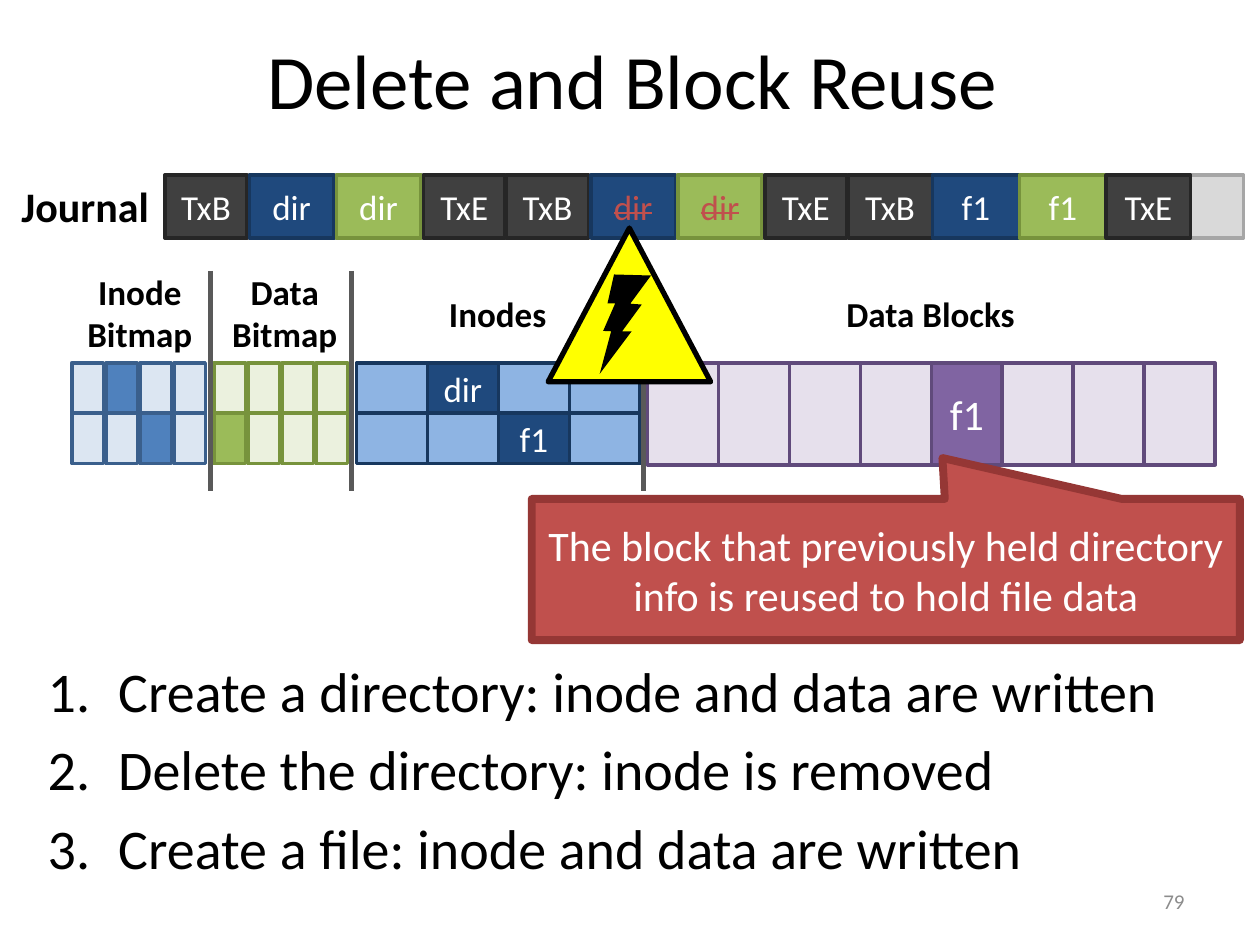
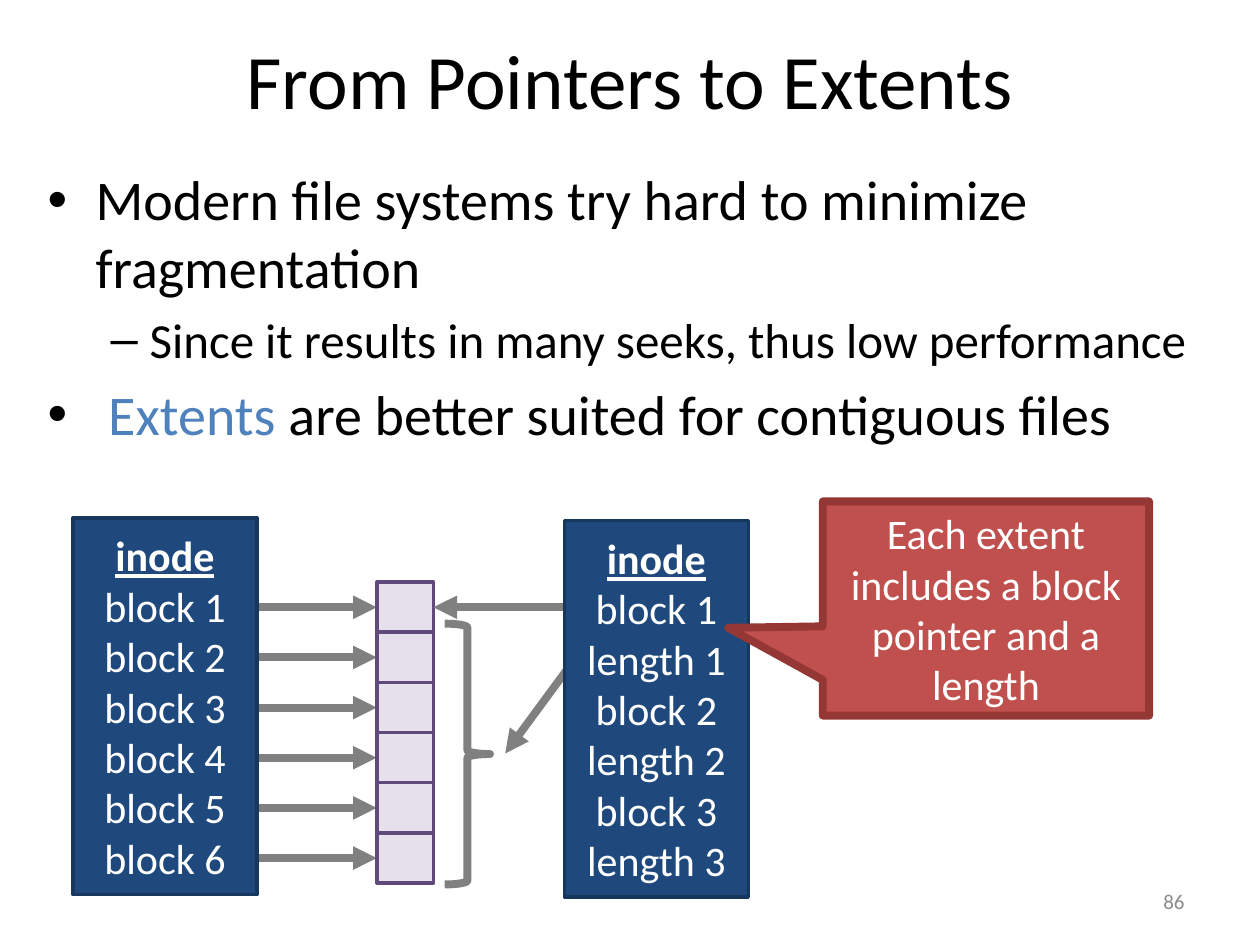
from pptx import Presentation
from pptx import util as u
from pptx.dml.color import RGBColor
from pptx.enum import shapes, text
from pptx.oxml.ns import qn
from lxml import etree

# Every length below is counted in columns and rows of this grid
COLS, ROWS = 100, 75
FONT = "Calibri"
COLOURS = dict(
    black="000000", white="FFFFFF", number="8C8C8C", accent="4F81BD", yellow="FFFF00",
    tag="404040", tag_line="262626", free="D9D9D9", free_line="A6A6A6",
    navy="1F497D", navy_line="17375E", sky="8EB4E3",
    green="9BBB59", green_line="77933C", pale_green="EBF1DE",
    blue_line="3A5F8C", pale_blue="DCE6F2",
    purple="8064A2", purple_line="604A7B", pale_purple="E6E0EC",
    red="C0504D", red_line="953735", divider="595959", arrow="808080",
)
KIND = shapes.MSO_SHAPE
LEFT, CENTRE, RIGHT = text.PP_ALIGN.LEFT, text.PP_ALIGN.CENTER, text.PP_ALIGN.RIGHT
TOP, MIDDLE = text.MSO_ANCHOR.TOP, text.MSO_ANCHOR.MIDDLE

# Body list levels: size, left margin and hanging indent, bullet tag and its attributes
NUMBERED = dict(size=32, margin=5.6, hang=5.6, bullet=("a:buAutoNum", {"type": "arabicPeriod"}))
BULLET = dict(size=32, margin=3.8, hang=3.8, bullet=("a:buChar", {"char": "•"}))
DASH = dict(size=28, margin=8.1, hang=3.1, level=1, bullet=("a:buChar", {"char": "–"}))


def rgb(name):
    return RGBColor.from_string(COLOURS[name])


def assign(target, values):
    for name, value in values.items():
        setattr(target, name, value)


class Deck:
    def __init__(self):
        self.prs = Presentation()
        assign(self.prs, dict(slide_width=u.Inches(10), slide_height=u.Inches(7.5)))
        self.s = None

    def x(self, columns):
        return u.Emu(int(self.prs.slide_width * columns / COLS))

    def y(self, rows):
        return u.Emu(int(self.prs.slide_height * rows / ROWS))

    def box(self, left, top, width, height):
        return self.x(left), self.y(top), self.x(width), self.y(height)

    def slide(self, title, number, left=5):
        """New slide with its title and slide number."""
        self.s = self.prs.slides.add_slide(self.prs.slide_layouts[5])
        sp = self.s.shapes.title
        assign(sp, dict(zip(("left", "top", "width", "height"), self.box(left, 0, 90, 12.5))))
        self.fill_text(sp.text_frame, [title], size=44, color="black")
        self.label(71.7, 69.5, 23.3, 4, [str(number)], size=12, color="number",
                   align=RIGHT, anchor=MIDDLE)

    def add_words(self, p, words, size, color, strike=False, **style):
        r = p.add_run()
        r.text = words
        assign(r.font, dict(name=FONT, size=u.Pt(size), **style))
        r.font.color.rgb = rgb(color)
        if strike:
            r.font._element.set("strike", "sngStrike")

    def fill_text(self, tf, lines, align=CENTRE, anchor=MIDDLE, wrap=True, **style):
        """A line is a string or a (string, extra style) pair."""
        assign(tf, dict(word_wrap=wrap, vertical_anchor=anchor))
        for i, line in enumerate(lines):
            words, extra = line if isinstance(line, tuple) else (line, {})
            p = tf.add_paragraph() if i else tf.paragraphs[0]
            p.alignment = align
            self.add_words(p, words, **{**style, **extra})

    def label(self, left, top, width, height, lines, **style):
        sp = self.s.shapes.add_textbox(*self.box(left, top, width, height))
        self.fill_text(sp.text_frame, lines, **style)

    def body(self, top, height, items):
        """List of (level, [(words, colour), ...])."""
        tf = self.s.shapes.add_textbox(*self.box(2.8, top, 94.9, height)).text_frame
        tf.word_wrap = True
        for i, (level, runs) in enumerate(items):
            p = tf.add_paragraph() if i else tf.paragraphs[0]
            assign(p, dict(level=level.get("level", 0), alignment=LEFT,
                           space_before=u.Pt(level["size"] * 0.2)))
            pPr = p._p.get_or_add_pPr()
            pPr.set("marL", str(self.x(level["margin"])))
            pPr.set("indent", str(-self.x(level["hang"])))
            tag, attributes = level["bullet"]
            font = "Arial" if tag == "a:buChar" else "+mj-lt"
            etree.SubElement(pPr, qn("a:buFont"), typeface=font)
            etree.SubElement(pPr, qn(tag), **attributes)
            for words, color in runs:
                self.add_words(p, words, level["size"], color)

    def shape(self, kind, left, top, width, height, fill=None, line=None, weight=2,
              lines=(), size=20, color="white"):
        sp = self.s.shapes.add_shape(kind, *self.box(left, top, width, height))
        sp.shadow.inherit = False
        for part, name in ((sp.fill, fill), (sp.line.fill, line)):
            if name:
                part.solid()
                part.fore_color.rgb = rgb(name)
            else:
                part.background()
        if line:
            sp.line.width = u.Pt(weight)
        if lines:
            self.fill_text(sp.text_frame, lines, size=size, color=color)
        return sp

    def cells(self, left, top, cols, rows, pitch, width, height, plain, marked, line,
              marks=None, size=20):
        """Grid of cells; marks maps (row, column) to the text of a filled cell."""
        marks = marks or {}
        for row in range(rows):
            for col in range(cols):
                words = marks.get((row, col))
                self.shape(KIND.RECTANGLE, left + col * pitch, top + row * height, width, height,
                           plain if words is None else marked, line,
                           lines=[words] if words else (), size=size)

    def line(self, x1, y1, x2, y2, color="arrow", weight=4.5, arrow=True):
        c = self.s.shapes.add_connector(shapes.MSO_CONNECTOR.STRAIGHT,
                                        self.x(x1), self.y(y1), self.x(x2), self.y(y2))
        c.line.color.rgb = rgb(color)
        c.line.width = u.Pt(weight)
        spPr = c._element.spPr
        if arrow:
            etree.SubElement(spPr.find(qn("a:ln")), qn("a:tailEnd"), type="triangle")
        etree.SubElement(spPr, qn("a:effectLst"))

    def callout(self, left, top, width, height, words, tip):
        sp = self.shape(KIND.RECTANGULAR_CALLOUT, left, top, width, height,
                        "red", "red_line", 4.5, [words], 24)
        for i, value in enumerate(tip):
            sp.adjustments[i] = value


def delete_and_reuse(deck):
    deck.slide("Delete and Block Reuse", 79, left=5.2)
    deck.body(51.6, 21.8, [(NUMBERED, [(words, "black")]) for words in (
        "Create a directory: inode and data are written",
        "Delete the directory: inode is removed",
        "Create a file: inode and data are written")])

    # Journal: three transactions, each TxB, inode, data, TxE
    deck.shape(KIND.RECTANGLE, 13.1, 13.9, 85.6, 5, "free", "free_line")
    deck.label(0, 13.8, 12.8, 5, ["Journal"], size=24, color="black", bold=True,
               align=RIGHT, anchor=TOP)
    struck = dict(color="red", strike=True)
    for i, (name, style, gap) in enumerate((("dir", {}, 0.2), ("dir", struck, 0.2), ("f1", {}, 0))):
        left = 13.1 + i * 27.1
        for words, extra, fill, pitch in (("TxB", {}, "tag", 6.7), (name, style, "navy", 6.9),
                                          (name, style, "green", 6.9), ("TxE", {}, "tag", 6.7)):
            deck.shape(KIND.RECTANGLE, left, 13.9, pitch - gap, 5, fill, fill + "_line",
                       lines=[(words, extra)])
            left += pitch

    # Disk regions
    small, wide = (2.7, 2.5, 4), (5.63, 5.63, 4)
    deck.cells(5.7, 28.8, 4, 2, *small, "pale_blue", "accent", "blue_line", {(0, 1): "", (1, 2): ""})
    deck.cells(17, 28.8, 4, 2, *small, "pale_green", "green", "green_line", {(1, 0): ""})
    deck.cells(28.3, 28.8, 4, 2, *wide, "sky", "navy", "navy_line", {(0, 1): "dir", (1, 2): "f1"})
    deck.cells(51.4, 28.8, 8, 1, 5.63, 5.63, 8.1, "pale_purple", "purple", "purple_line",
               {(0, 4): "f1"}, size=24)
    for left, top, width, height, lines in ((5.9, 21, 10.4, 7.7, ["Inode", "Bitmap"]),
                                            (17.4, 21, 10.4, 7.7, ["Data", "Bitmap"]),
                                            (34.6, 22.7, 9.8, 4.4, ["Inodes"]),
                                            (66.1, 22.7, 15.5, 4.4, ["Data Blocks"])):
        deck.label(left, top, width, height, lines, size=20, color="black", bold=True,
                   anchor=TOP, wrap=False)
    for x in (16.7, 27.9, 51.1):
        deck.line(x, 21.5, x, 39, "divider", 3, arrow=False)

    # Crash sign and remark
    deck.shape(KIND.ISOSCELES_TRIANGLE, 43.5, 18.1, 12.9, 12.2, "yellow", "black", 3)
    bolt = deck.shape(KIND.LIGHTNING_BOLT, 46, 21.8, 6.8, 6.8, "black")
    bolt.rotation = 336.9
    bolt._element.spPr.find(qn("a:xfrm")).set("flipH", "1")
    deck.callout(42.2, 39.6, 56.2, 11.2, "The block that previously held directory info "
                 "is reused to hold file data", (0.08, -0.79))


def pointers_to_extents(deck):
    deck.slide("From Pointers to Extents", 86)
    deck.body(12.6, 24.9, [
        (BULLET, [("Modern file systems try hard to minimize fragmentation", "black")]),
        (DASH, [("Since it results in many seeks, thus low performance", "black")]),
        (BULLET, [(" ", "black"), ("Extents", "accent"),
                  (" are better suited for contiguous files", "black")])])

    # Data blocks, with one pointer each from the left and extents from the right
    pitch = 3.98
    for i in range(6):
        deck.line(7.8, 48.2 + i * pitch, 29.9, 48.2 + i * pitch)
    deck.cells(29.9, 46.2, 1, 6, 4.5, 4.5, pitch, "pale_purple", "purple", "purple_line")
    deck.line(55.2, 48.2, 34.4, 48.2)
    deck.shape(KIND.RIGHT_BRACE, 35.3, 49.5, 3.6, 20.7, line="arrow", weight=4.5)
    deck.line(45.7, 52.2, 40.1, 59.8)

    # Inodes
    heading = ("inode", dict(bold=True, underline=True))
    pointers = [f"block {i}" for i in range(1, 7)]
    extents = [f"{part} {i}" for i in range(1, 4) for part in ("block", "length")]
    for left, top, entries in ((5.8, 41.1, pointers), (44.8, 41.3, extents)):
        deck.shape(KIND.RECTANGLE, left, top, 14.6, 29.9, "navy", "navy_line",
                   lines=[heading, *entries], size=24)
    deck.callout(65.3, 39.8, 25.9, 17, "Each extent includes a block pointer and a length",
                 (-0.79, 0.09))


def main():
    deck = Deck()
    delete_and_reuse(deck)
    pointers_to_extents(deck)
    deck.prs.save("out.pptx")


if __name__ == "__main__":
    main()
